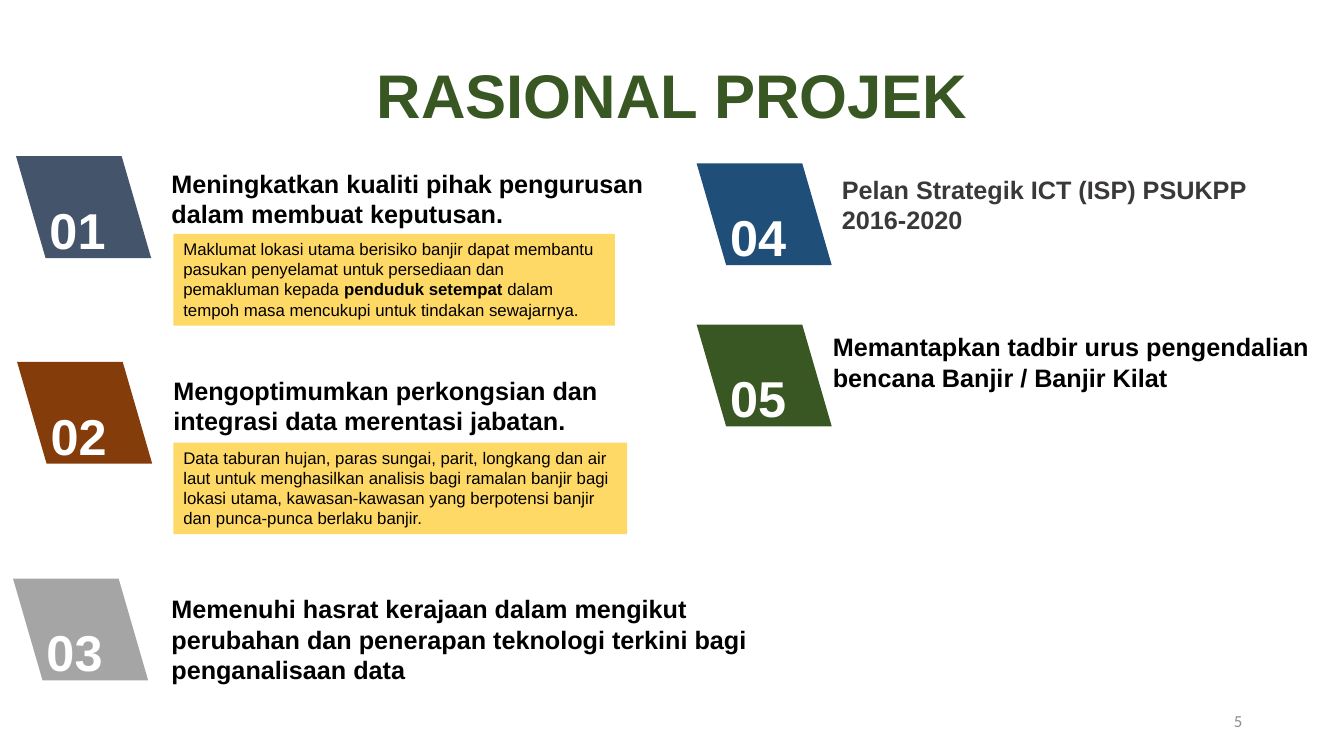
from lxml import etree
from pptx import Presentation
from pptx.dml.color import RGBColor
from pptx.enum import shapes, text
from pptx.oxml import ns
from pptx.util import Inches, Pt

BLACK = RGBColor(0x00, 0x00, 0x00)
WHITE = RGBColor(0xFF, 0xFF, 0xFF)
CHARCOAL = RGBColor(0x3B, 0x38, 0x38)
GREY = RGBColor(0x8C, 0x8C, 0x8C)
GREEN = RGBColor(0x38, 0x57, 0x23)
YELLOW = RGBColor(0xFF, 0xD9, 0x66)
SLATE = RGBColor(0x44, 0x54, 0x6A)
BROWN = RGBColor(0x84, 0x3C, 0x0B)
SILVER = RGBColor(0xA5, 0xA5, 0xA5)
BLUE = RGBColor(0x1F, 0x4E, 0x79)

TITLE = "RASIONAL PROJEK"
BADGE_SIZE = (1.34, 1.01)

# badge position, badge colour, heading box, heading colour, heading paragraphs
REASONS = [
    ((0.16, 1.55), SLATE, (1.7, 1.61, 4.75, 0.71), BLACK,
     ["Meningkatkan kualiti pihak pengurusan dalam membuat keputusan."]),
    ((0.17, 3.59), BROWN, (1.72, 3.66, 4.7, 0.71), BLACK,
     ["Mengoptimumkan perkongsian dan integrasi data merentasi jabatan."]),
    ((0.13, 5.74), SILVER, (1.7, 5.83, 7.88, 1.01), BLACK,
     ["Memenuhi hasrat kerajaan dalam mengikut",
      "perubahan dan penerapan teknologi terkini bagi",
      "penganalisaan data"]),
    ((6.91, 1.62), BLUE, (8.35, 1.67, 4.5, 0.71), CHARCOAL,
     ["Pelan Strategik ICT (ISP) PSUKPP 2016-2020"]),
    ((6.91, 3.22), GREEN, (8.26, 3.23, 5.05, 0.71), BLACK,
     ["Memantapkan tadbir urus pengendalian bencana Banjir / Banjir Kilat"]),
]

# note box, runs as (wording, bold)
NOTES = [
    ((1.72, 2.32, 4.38, 0.91),
     [("Maklumat lokasi utama berisiko banjir dapat membantu pasukan penyelamat "
       "untuk persediaan dan pemakluman kepada ", False),
      ("penduduk setempat ", True),
      ("dalam tempoh masa mencukupi untuk tindakan sewajarnya.", False)]),
    ((1.72, 4.39, 4.5, 0.91),
     [("Data taburan hujan, paras sungai, parit, longkang dan air laut untuk "
       "menghasilkan analisis bagi ramalan banjir bagi lokasi utama, "
       "kawasan-kawasan yang berpotensi banjir dan punca-punca berlaku banjir.",
       False)]),
]


def style(font, size, color, bold=False, name="Arial"):
    font.name, font.size, font.bold = name, Pt(size), bold
    font.color.rgb = color


def add_filled(slide, kind, box, color):
    shape = slide.shapes.add_shape(kind, *map(Inches, box))
    shape.shadow.inherit = False
    shape.fill.solid()
    shape.fill.fore_color.rgb = color
    shape.line.fill.background()
    shape.text_frame.word_wrap = True
    shape.text_frame.paragraphs[0].alignment = text.PP_ALIGN.LEFT
    return shape


def add_badge(slide, number, position, color):
    """Add a left-leaning parallelogram holding a two-digit number."""
    badge = add_filled(slide, shapes.MSO_SHAPE.PARALLELOGRAM,
                       position + BADGE_SIZE, color)
    badge.adjustments[0] = 0.29
    badge._element.spPr.find(ns.qn("a:xfrm")).set("flipH", "1")
    frame = badge.text_frame
    frame.vertical_anchor = text.MSO_ANCHOR.BOTTOM
    frame.margin_top = Inches(0.85)
    frame.text = f"{number:02d}"
    style(frame.paragraphs[0].runs[0].font, 36, WHITE, bold=True)


def add_heading(slide, box, color, lines):
    frame = slide.shapes.add_textbox(*map(Inches, box)).text_frame
    frame.word_wrap = True
    frame.vertical_anchor = text.MSO_ANCHOR.BOTTOM
    frame.margin_left = frame.margin_right = 0
    frame.text = "\n".join(lines)
    for paragraph in frame.paragraphs:
        style(paragraph.runs[0].font, 18, color, bold=True)


def add_note(slide, box, runs):
    note = add_filled(slide, shapes.MSO_SHAPE.RECTANGLE, box, YELLOW)
    note.text_frame.vertical_anchor = text.MSO_ANCHOR.TOP
    for wording, bold in runs:
        run = note.text_frame.paragraphs[0].add_run()
        run.text = wording
        style(run.font, 12, BLACK, bold)


def add_slide_number(slide, number):
    box = slide.shapes.add_textbox(*map(Inches, (9.42, 6.95, 3, 0.4)))
    frame = box.text_frame
    frame.word_wrap = True
    frame.vertical_anchor = text.MSO_ANCHOR.MIDDLE
    frame.text = number
    paragraph = frame.paragraphs[0]
    paragraph.alignment = text.PP_ALIGN.RIGHT
    run = paragraph.runs[0]
    style(run.font, 12, GREY, name="Calibri")
    field = etree.SubElement(paragraph._p, ns.qn("a:fld"), type="slidenum",
                             id="{B6F15528-21DE-4FAA-801E-634DDDAF4B2B}")
    field.extend(list(run._r))
    paragraph._p.remove(run._r)


def main():
    presentation = Presentation()
    presentation.slide_width, presentation.slide_height = Inches(13.33), Inches(7.5)
    presentation.element.set("firstSlideNum", "5")
    slide = presentation.slides.add_slide(presentation.slide_layouts[5])

    title = slide.shapes.title
    title.left, title.top, title.width, title.height = map(
        Inches, (3.61, 0.51, 6.12, 0.84))
    title.text_frame.text = TITLE
    title.text_frame.word_wrap = False
    title.text_frame.auto_size = text.MSO_AUTO_SIZE.NONE
    title.text_frame.vertical_anchor = text.MSO_ANCHOR.MIDDLE
    style(title.text_frame.paragraphs[0].runs[0].font, 44, GREEN, bold=True)

    for number, (position, fill, box, color, lines) in enumerate(REASONS, 1):
        add_badge(slide, number, position, fill)
        add_heading(slide, box, color, lines)
    for box, runs in NOTES:
        add_note(slide, box, runs)
    add_slide_number(slide, "5")
    presentation.save("out.pptx")


if __name__ == "__main__":
    main()
